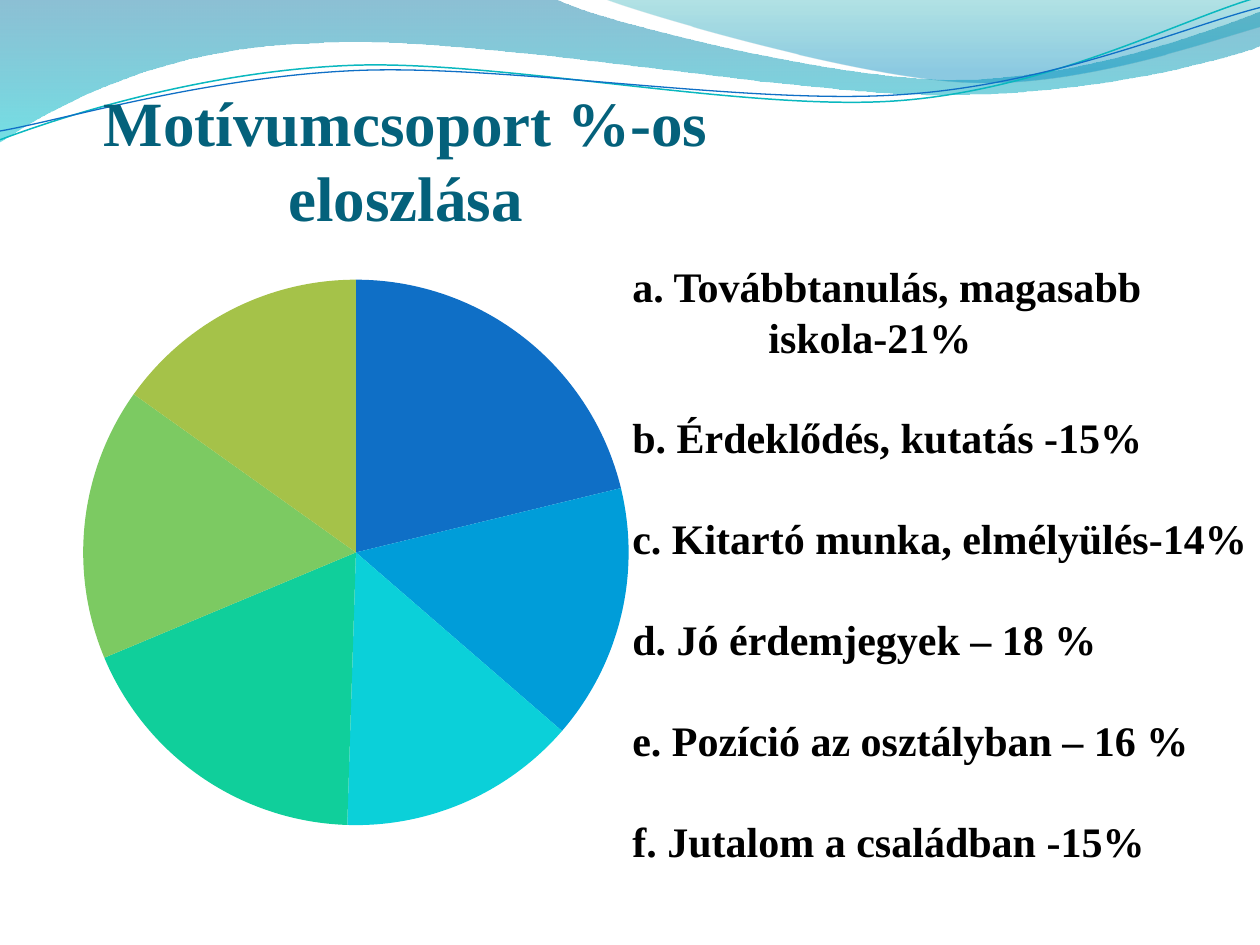
from dataclasses import dataclass

from lxml.etree import SubElement
from pptx import Presentation
from pptx.chart.data import CategoryChartData
from pptx.chart.point import Point
from pptx.dml.color import RGBColor
from pptx.enum.chart import XL_CHART_TYPE as ChartType
from pptx.enum.text import MSO_ANCHOR as Anchor, PP_ALIGN as Align
from pptx.oxml import parse_xml
from pptx.oxml.ns import nsdecls, qn
from pptx.util import Inches, Pt

SERIF = "Times New Roman"


@dataclass
class Stop:
    position: float
    color: str
    opacity: int


@dataclass
class Wave:
    start: tuple
    segments: list
    stops: tuple = ()
    line: str = ""
    weight: float = 0


@dataclass
class Motive:
    label: str
    share: int
    color: str
    hanging: float = 0


WAVES = [
    Wave((0, 0), [
        [(4.4, -0.01)],
        [(4.76, 0.17), (6.64, 0.63), (7.58, 0.63)],
        [(8.53, 0.63), (9.58, 0.26), (10, 0.09)],
        [(10.01, 0.36)],
        [(9.83, 0.44), (8.7, 0.76), (7.46, 0.75)],
        [(6.22, 0.75), (3.82, 0.28), (2.57, 0.34)],
        [(1.29, 0.36), (0.46, 0.83), (-0.01, 1.13)],
        [(0, 0)],
    ], stops=(Stop(0, "0074A1", 45), Stop(1, "00C6CF", 55))),
    Wave((4.79, -0.01), [
        [(5.09, 0.11), (6.82, 0.62), (7.69, 0.65)],
        [(8.56, 0.69), (9.61, 0.32), (10, 0.21)],
        [(10, 0)],
        [(4.79, -0.01)],
    ], stops=(Stop(0, "00A1A9", 30), Stop(0.8, "008BBF", 45))),
    Wave((0, 1.11), [
        [(0.48, 0.93), (1.58, 0.57), (2.77, 0.52)],
        [(3.95, 0.47), (5.93, 0.89), (7.13, 0.8)],
        [(8.33, 0.71), (9.38, 0.15), (9.98, -0.02)],
    ], line="0AB8BF", weight=0.85),
    Wave((0, 1.04), [
        [(0.47, 0.96), (1.64, 0.61), (2.83, 0.56)],
        [(4.03, 0.51), (5.97, 0.84), (7.17, 0.75)],
        [(8.36, 0.67), (9.41, 0.21), (10, 0.06)],
    ], line="0F6FC6", weight=0.75),
]

MOTIVES = [
    Motive("a. Továbbtanulás, magasabb iskola-21%", 21, "0F6FC6", hanging=1.08),
    Motive("b. Érdeklődés, kutatás -15%", 15, "009DD9"),
    Motive("c. Kitartó munka, elmélyülés-14%", 14, "0BD0D9"),
    Motive("d. Jó érdemjegyek – 18 %", 18, "10CF9B"),
    Motive("e. Pozíció az osztályban – 16 %", 16, "7CCA62"),
    Motive("f. Jutalom a családban -15%", 15, "A5C249"),
]


def rgb(color: str) -> RGBColor:
    """Turn a hex string into a colour."""
    return RGBColor.from_string(color)


def bend(ribbon, segments: list) -> None:
    """Join each three straight steps of a curved segment into one cubic."""
    steps = list(ribbon._element.iter(qn("a:lnTo")))
    for segment in segments:
        group, steps = steps[:len(segment)], steps[len(segment):]
        if len(group) == 3:
            first, *others = group
            first.tag = qn("a:cubicBezTo")
            for step in others:
                first.append(step[0])
                step.getparent().remove(step)


def draw_wave(slide, wave: Wave) -> None:
    """Draw a gradient band or a thin wavy line."""
    builder = slide.shapes.build_freeform(*map(Inches, wave.start))
    builder.add_line_segments(
        [(Inches(x), Inches(y)) for segment in wave.segments for x, y in segment],
        close=bool(wave.stops))
    ribbon = builder.convert_to_shape()
    bend(ribbon, wave.segments)
    ribbon.shadow.inherit = False
    if not wave.stops:
        ribbon.fill.background()
        ribbon.line.color.rgb = rgb(wave.line)
        ribbon.line.width = Pt(wave.weight)
        return
    ribbon.line.fill.background()
    ribbon.fill.gradient()
    ribbon.fill.gradient_angle = 270
    for target, stop in zip(ribbon.fill.gradient_stops, wave.stops):
        target.position = stop.position
        target.color.rgb = rgb(stop.color)
    for tint, stop in zip(ribbon._element.spPr.iter(qn("a:srgbClr")), wave.stops):
        SubElement(tint, qn("a:alpha"), val=str(stop.opacity * 1000))


def add_text(slide, lines: list, box: tuple, *, size: float, color: str,
             align=Align.LEFT, anchor=Anchor.TOP, insets=(0.1, 0.05, 0.1, 0.05),
             gap: float = 0, hangings=()) -> None:
    """Add a bold serif text box with one paragraph per line."""
    frame = slide.shapes.add_textbox(*map(Inches, box)).text_frame
    frame.word_wrap = True
    frame.vertical_anchor = anchor
    (frame.margin_left, frame.margin_top,
     frame.margin_right, frame.margin_bottom) = map(Inches, insets)
    frame.text = "\n".join(lines)
    for paragraph in frame.paragraphs:
        paragraph.alignment = align
        paragraph.space_after = Pt(gap)
        for run in paragraph.runs:
            run.font.name = SERIF
            run.font.size = Pt(size)
            run.font.bold = True
            run.font.color.rgb = rgb(color)
    for paragraph, hanging in zip(frame.paragraphs, hangings):
        properties = paragraph._p.get_or_add_pPr()
        properties.set("marL", str(Inches(hanging)))
        properties.set("indent", str(-Inches(hanging)))


def add_pie(slide, motives: list, box: tuple, plot_box: tuple) -> None:
    """Add the pie of motive shares, with its plot placed in inches."""
    shares = CategoryChartData()
    shares.categories = ["1"]
    shares.add_series("Series 1", [motive.share for motive in motives])
    pie = slide.shapes.add_chart(ChartType.PIE, *map(Inches, box), shares).chart
    pie.has_legend = False
    pie.has_title = False
    pie.font.name = "TeX Gyre Pagella"
    pie.font.size = Pt(18)
    pie.font.color.rgb = rgb("000000")
    plot = pie.plots[0]
    plot.vary_by_categories = True
    for index, motive in enumerate(motives):
        slice_format = Point(plot.series[0]._element, index).format
        slice_format.fill.solid()
        slice_format.fill.fore_color.rgb = rgb(motive.color)
        slice_format.line.fill.background()
    area = pie._chartSpace.chart.plotArea
    for layout in area.findall(qn("c:layout")):
        area.remove(layout)
    places = "".join(f'<c:{side} val="{length / box[2 + index % 2]}"/>'
                     for index, (side, length) in enumerate(zip("xywh", plot_box)))
    area.insert(0, parse_xml(
        f'<c:layout {nsdecls("c")}><c:manualLayout><c:layoutTarget val="inner"/>'
        f'<c:xMode val="edge"/><c:yMode val="edge"/>{places}'
        '</c:manualLayout></c:layout>'))


def main() -> None:
    """Build the slide and save it."""
    deck = Presentation()
    deck.slide_width, deck.slide_height = Inches(10), Inches(7.5)
    slide = deck.slides.add_slide(deck.slide_layouts[6])
    for wave in WAVES:
        draw_wave(slide, wave)
    add_text(slide, ["Motívumcsoport %-os eloszlása"], (0.5, 0.36, 5.44, 1.5),
             size=36, color="04617B", align=Align.CENTER, anchor=Anchor.BOTTOM,
             insets=(0, 0.05, 0, 0))
    add_pie(slide, MOTIVES, (0.5, 1.94, 4.89, 5.2), (0.02, 0.28, 4.61, 4.33))
    add_text(slide, [motive.label for motive in MOTIVES], (4.92, 2.02, 5.75, 9.49),
             size=24, color="000000", gap=28.8,
             hangings=[motive.hanging for motive in MOTIVES])
    deck.save("out.pptx")


if __name__ == "__main__":
    main()
